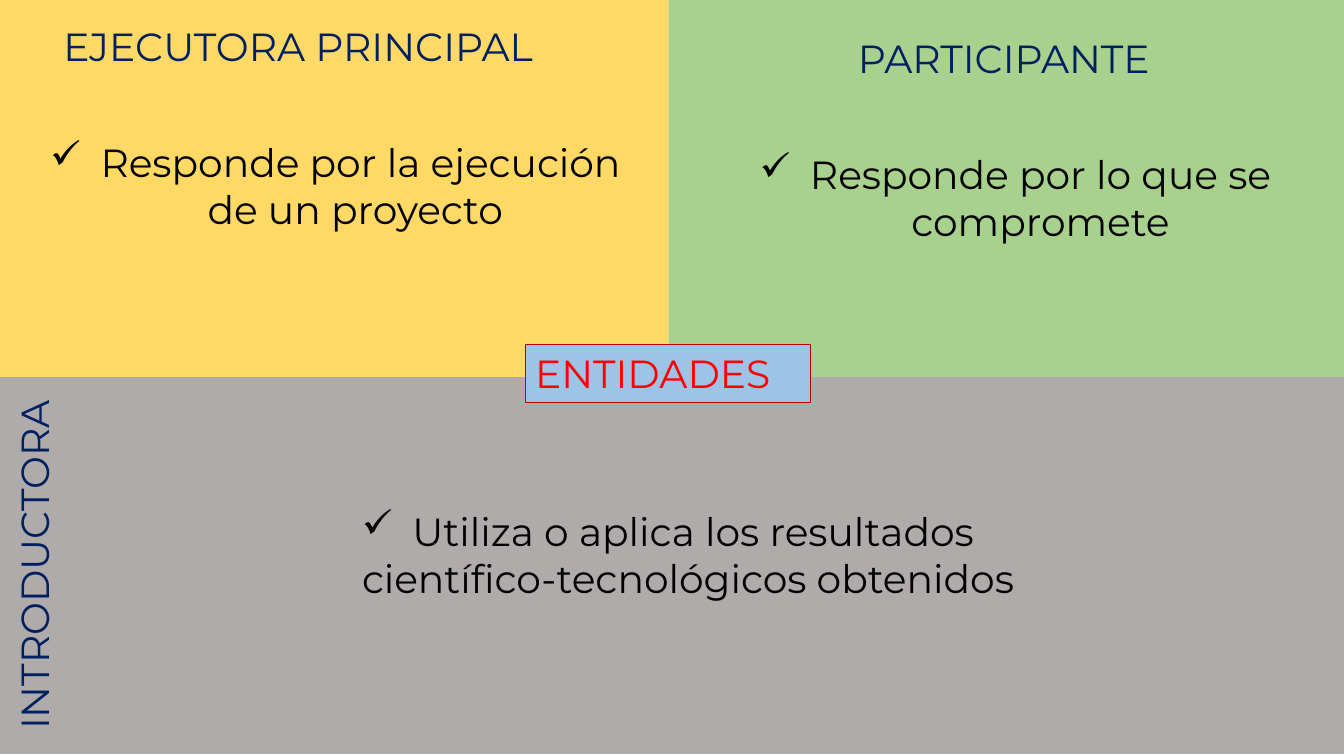
from lxml import etree
from pptx import Presentation
from pptx.dml.color import RGBColor
from pptx.enum.shapes import MSO_SHAPE
from pptx.enum.text import MSO_ANCHOR, MSO_AUTO_SIZE, PP_ALIGN
from pptx.oxml.ns import qn
from pptx.util import Inches, Pt

RECT = MSO_SHAPE.RECTANGLE
TOP = MSO_ANCHOR.TOP
GROW = MSO_AUTO_SIZE.SHAPE_TO_FIT_TEXT
LEFT, CENTER = PP_ALIGN.LEFT, PP_ALIGN.CENTER

WIDTH, HEIGHT = 13.33, 7.5
SPLIT_X, SPLIT_Y = 6.63, 3.74
COLORS = {
    "gold": "FFD966",
    "green": "A9D18E",
    "gray": "AFABAB",
    "blue": "9DC3E6",
    "border": "C00000",
    "red": "FF0000",
    "navy": "002060",
    "black": "000000",
}


def color(name):
    return RGBColor.from_string(COLORS[name])


def add_panel(slide, box, fill):
    panel = slide.shapes.add_shape(RECT, *map(Inches, box))
    panel.shadow.inherit = False
    panel.fill.solid()
    panel.fill.fore_color.rgb = color(fill)
    panel.line.fill.background()
    return panel


def set_text(shape, text, ink, align):
    frame = shape.text_frame
    frame.word_wrap = True
    frame.auto_size = GROW
    frame.vertical_anchor = TOP
    para = frame.paragraphs[0]
    para.text = text
    para.alignment = align
    para.font.name = "Montserrat"
    para.font.size = Pt(28)
    para.font.color.rgb = color(ink)
    return para


def add_title(slide, box, text, align=CENTER, angle=0):
    title = slide.shapes.add_textbox(*map(Inches, box))
    title.rotation = angle
    set_text(title, text, "navy", align)


def add_check(slide, box, text):
    note = slide.shapes.add_textbox(*map(Inches, box))
    # Check mark with a hanging indent
    props = note.text_frame.paragraphs[0]._p.get_or_add_pPr()
    props.set("marL", str(Inches(0.5)))
    props.set("indent", str(-Inches(0.5)))
    etree.SubElement(props, qn("a:buChar")).set("char", "✓")
    set_text(note, text, "black", CENTER)


def add_label(slide, box, text):
    label = add_panel(slide, box, "blue")
    label.line.color.rgb = color("border")
    label.line.width = Pt(0.75)
    set_text(label, text, "red", LEFT)


def main():
    deck = Presentation()
    deck.slide_width, deck.slide_height = Inches(WIDTH), Inches(HEIGHT)
    slide = deck.slides.add_slide(deck.slide_layouts[6])

    # Background panels
    add_panel(slide, (0, SPLIT_Y, WIDTH, SPLIT_Y), "gray")
    add_panel(slide, (SPLIT_X, 0, WIDTH - SPLIT_X, SPLIT_Y), "green")
    add_panel(slide, (0, 0, SPLIT_X, SPLIT_Y), "gold")

    # Central label
    add_label(slide, (5.21, 3.42, 2.83, 0.57), "ENTIDADES")

    # Main executor
    add_title(slide, (0.53, 0.17, 5.36, 0.57), "EJECUTORA PRINCIPAL", LEFT)
    add_check(slide, (0.24, 1.32, 6.17, 1.04),
              "Responde por la ejecución de un proyecto ")

    # Participant
    add_title(slide, (8.18, 0.29, 3.55, 0.57), "PARTICIPANTE")
    add_check(slide, (7.14, 1.44, 5.86, 1.04),
              "Responde por lo que se compromete")

    # Introducer
    add_title(slide, (-1.55, 5.32, 3.77, 0.57), "INTRODUCTORA", angle=270)
    add_check(slide, (2.76, 4.98, 7.73, 1.51),
              "Utiliza o aplica los resultados científico-tecnológicos obtenidos ")

    deck.save("out.pptx")


if __name__ == "__main__":
    main()
